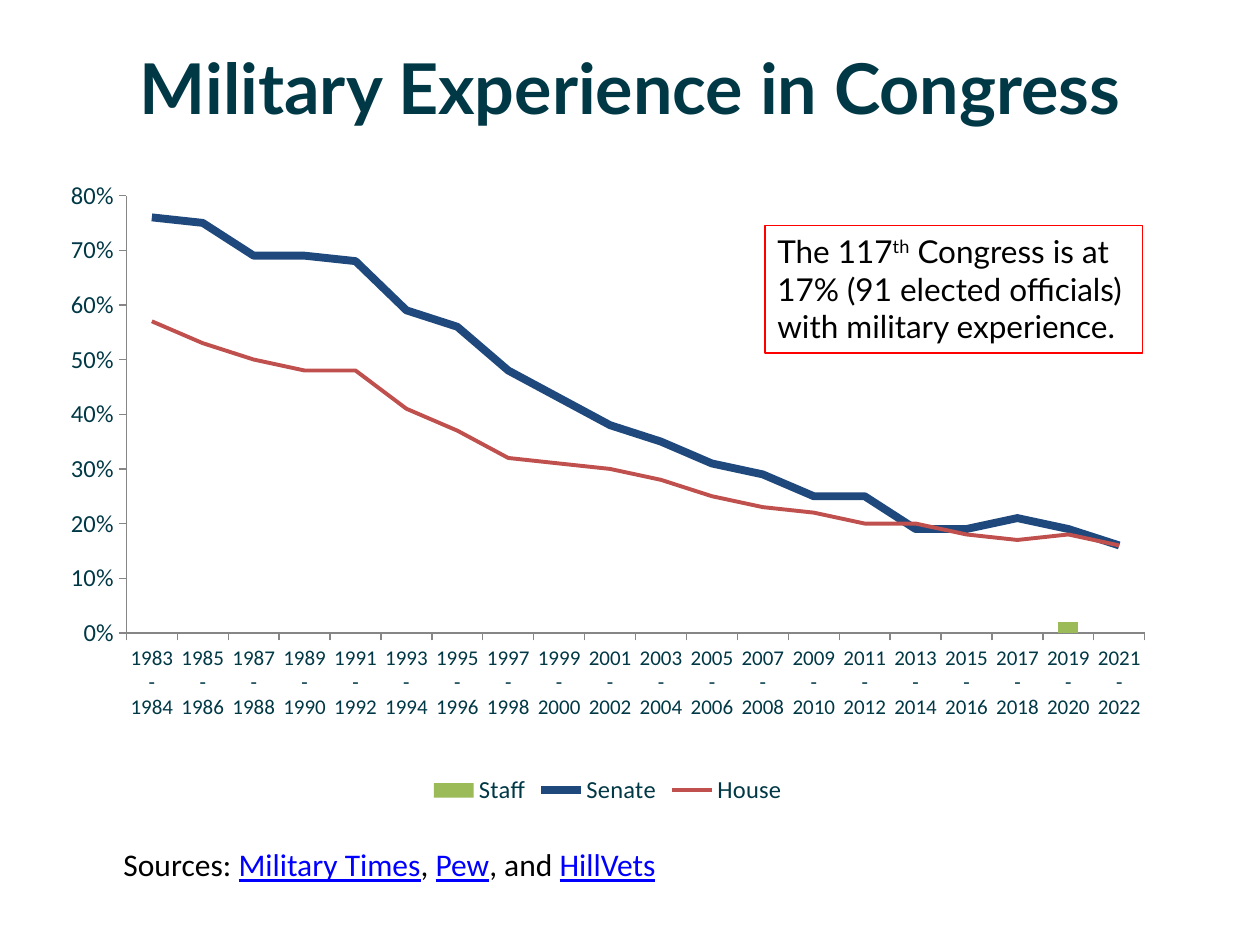
from lxml import etree
from pptx import Presentation
from pptx.chart.data import CategoryChartData
from pptx.dml.color import RGBColor
from pptx.enum.chart import (XL_CHART_TYPE, XL_LEGEND_POSITION, XL_MARKER_STYLE,
                             XL_TICK_MARK)
from pptx.enum.shapes import MSO_SHAPE
from pptx.enum.text import MSO_ANCHOR, MSO_AUTO_SIZE, PP_ALIGN
from pptx.oxml.ns import qn
from pptx.util import Cm, Pt

COLUMNS = XL_CHART_TYPE.COLUMN_CLUSTERED
BOTTOM = XL_LEGEND_POSITION.BOTTOM
NO_MARKER = XL_MARKER_STYLE.NONE
TICK_OUTSIDE = XL_TICK_MARK.OUTSIDE
TICK_NONE = XL_TICK_MARK.NONE
RECTANGLE = MSO_SHAPE.RECTANGLE
MIDDLE, TOP = MSO_ANCHOR.MIDDLE, MSO_ANCHOR.TOP
GROW = MSO_AUTO_SIZE.SHAPE_TO_FIT_TEXT
LEFT, CENTER = PP_ALIGN.LEFT, PP_ALIGN.CENTER

TEAL, BLACK, LINK, RED = "003846", "000000", "0000FF", "FF0000"
GREEN, NAVY, BRICK, GREY, WHITE = "9BBB59", "1F497D", "C0504D", "868686", "FFFFFF"

# Two-year terms; the last three are written without spaces
TERMS = [f"{year} - {year + 1}" if year < 2017 else f"{year}-{year + 1}"
         for year in range(1983, 2022, 2)]
STAFF = [0.02 if term == "2019-2020" else None for term in TERMS]
SENATE = [0.76, 0.75, 0.69, 0.69, 0.68, 0.59, 0.56, 0.48, 0.43, 0.38,
          0.35, 0.31, 0.29, 0.25, 0.25, 0.19, 0.19, 0.21, 0.19, 0.16]
HOUSE = [0.57, 0.53, 0.5, 0.48, 0.48, 0.41, 0.37, 0.32, 0.31, 0.3,
         0.28, 0.25, 0.23, 0.22, 0.2, 0.2, 0.18, 0.17, 0.18, 0.16]
LINE_STYLES = [(NAVY, 4.5), (BRICK, 2.25)]


def color(hex_string):
    return RGBColor.from_string(hex_string)


def style_font(font, name, size, hex_string):
    font.name = name
    font.size = Pt(size)
    font.color.rgb = color(hex_string)


def add_span(para, text, name, size, hex_string=BLACK):
    span = para.add_run()
    span.text = text
    style_font(span.font, name, size, hex_string)
    return span


def prepare_text(box, wrap, anchor=TOP, align=LEFT):
    frame = box.text_frame
    frame.word_wrap = wrap
    frame.vertical_anchor = anchor
    para = frame.paragraphs[0]
    para.alignment = align
    return para


def add_title(slide):
    box = slide.shapes.add_textbox(Cm(1.9), Cm(0.41), Cm(21.6), Cm(2.67))
    para = prepare_text(box, True, MIDDLE, CENTER)
    add_span(para, "Military Experience in Congress", "Lato", 40, TEAL).font.bold = True


def add_sources(slide):
    box = slide.shapes.add_textbox(Cm(2.24), Cm(16.92), Cm(12.34), Cm(1.02))
    para = prepare_text(box, False)
    box.text_frame.auto_size = GROW
    for text, linked in [("Sources: ", False), ("Military Times", True), (", ", False),
                         ("Pew", True), (", and ", False), ("HillVets", True)]:
        span = add_span(para, text, "Calibri", 18, LINK if linked else BLACK)
        span.font.underline = linked


def add_callout(slide):
    box = slide.shapes.add_shape(RECTANGLE, Cm(15.42), Cm(4.55), Cm(7.62), Cm(2.57))
    box.shadow.inherit = False
    box.fill.background()
    box.line.color.rgb = color(RED)
    box.line.width = Pt(0.75)
    para = prepare_text(box, True)
    box.text_frame.auto_size = GROW
    add_span(para, "The 117", "Lato", 18)
    ordinal = add_span(para, "th", "Lato", 18)
    ordinal.font._element.set("baseline", "30000")
    add_span(para, " Congress is at 17% (91 elected officials) with military experience.",
             "Lato", 18)


def add_element(parent, tag, value=None):
    element = etree.SubElement(parent, qn(tag))
    if value is not None:
        element.set("val", str(value))
    return element


def move_to_lines(chart):
    """Turn every series after the first into a line on the same axes."""
    bars = chart.plots[0]._element
    lines = bars.makeelement(qn("c:lineChart"))
    bars.addnext(lines)
    add_element(lines, "c:grouping", "standard")
    add_element(lines, "c:varyColors", 0)
    for series in bars.findall(qn("c:ser"))[1:]:
        for bar_only in series.findall(qn("c:invertIfNegative")):
            series.remove(bar_only)
        lines.append(series)
    add_element(lines, "c:marker", 1)
    for axis in bars.findall(qn("c:axId")):
        add_element(lines, "c:axId", axis.get("val"))


def set_plot_area(chart, left, top, width, height):
    area = chart._chartSpace.chart.plotArea
    for old in area.findall(qn("c:layout")):
        area.remove(old)
    layout = area.makeelement(qn("c:layout"))
    area.insert(0, layout)
    manual = add_element(layout, "c:manualLayout")
    for tag, value in [("layoutTarget", "inner"), ("xMode", "edge"), ("yMode", "edge"),
                       ("x", left), ("y", top), ("w", width), ("h", height)]:
        add_element(manual, f"c:{tag}", value)


def style_axis(axis, size):
    style_font(axis.tick_labels.font, "Calibri", size, TEAL)
    axis.major_tick_mark = TICK_OUTSIDE
    axis.minor_tick_mark = TICK_NONE
    axis.format.line.color.rgb = color(GREY)
    axis.format.line.width = Pt(0.75)


def add_congress_chart(slide):
    data = CategoryChartData(number_format="0%")
    data.categories = TERMS
    for name, values in [("Staff", STAFF), ("Senate", SENATE), ("House", HOUSE)]:
        data.add_series(name, values)
    chart = slide.shapes.add_chart(COLUMNS, Cm(0.97), Cm(3.56), Cm(22.56), Cm(12.78),
                                   data).chart
    chart.has_title = False
    style_font(chart.font, "Cabin", 18, BLACK)
    move_to_lines(chart)
    set_plot_area(chart, 0.07, 0.03, 0.91, 0.69)

    # Series
    columns, lines = chart.plots
    columns.vary_by_categories = False
    columns.gap_width = 150
    fill = columns.series[0].format.fill
    fill.solid()
    fill.fore_color.rgb = color(GREEN)
    for series, (hex_string, width) in zip(lines.series, LINE_STYLES):
        series.format.line.color.rgb = color(hex_string)
        series.format.line.width = Pt(width)
        series.marker.style = NO_MARKER
        series.smooth = False

    # Axes
    style_axis(chart.category_axis, 12)
    value_axis = chart.value_axis
    style_axis(value_axis, 14)
    value_axis.minimum_scale, value_axis.maximum_scale = 0, 0.8
    value_axis.major_unit = 0.1
    value_axis.tick_labels.number_format = "0%"
    value_axis.tick_labels.number_format_is_linked = False
    grid = value_axis.major_gridlines.format.line
    grid.color.rgb = color(WHITE)
    grid.width = Pt(0.75)

    # Legend
    chart.has_legend = True
    chart.legend.position = BOTTOM
    chart.legend.include_in_layout = False
    style_font(chart.legend.font, "Calibri", 14, TEAL)


def main():
    deck = Presentation()
    deck.slide_width, deck.slide_height = Cm(25.4), Cm(19.05)
    slide = deck.slides.add_slide(deck.slide_layouts[6])
    add_title(slide)
    add_congress_chart(slide)
    add_sources(slide)
    add_callout(slide)
    deck.save("out.pptx")


if __name__ == "__main__":
    main()
